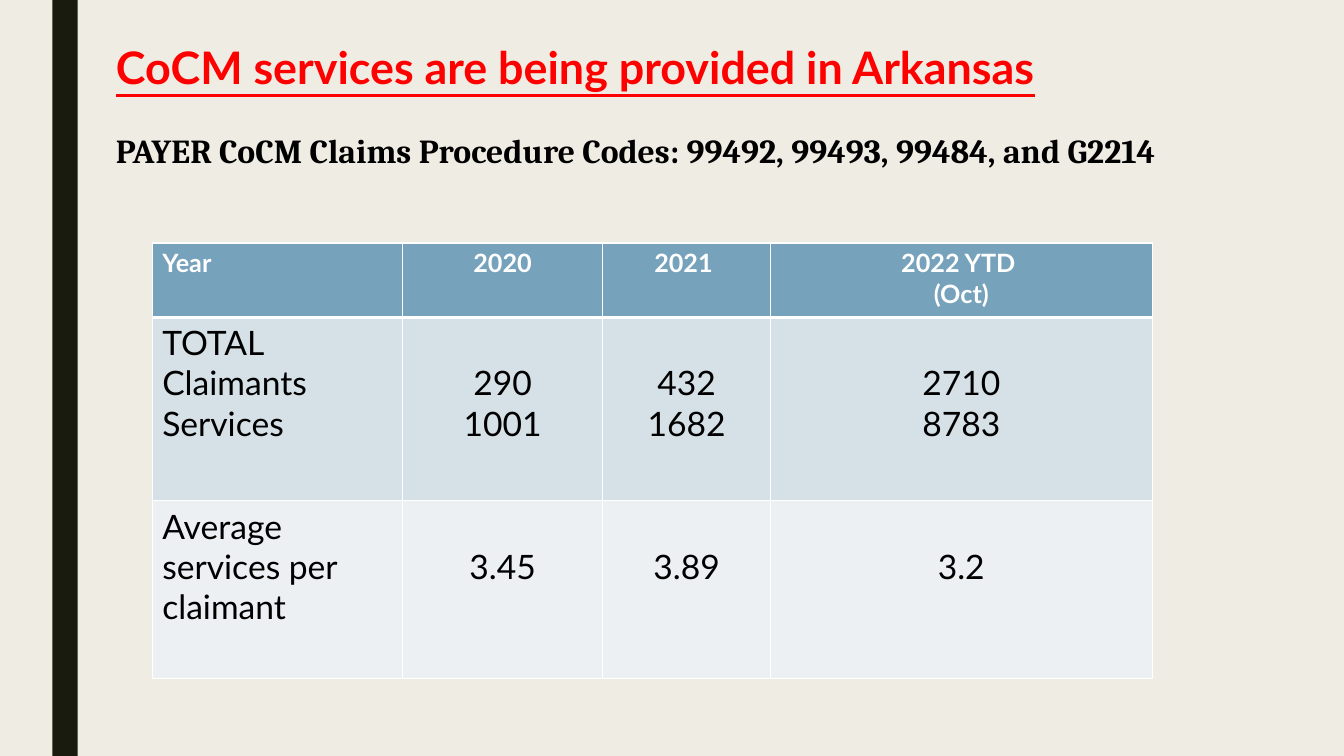
from lxml.etree import SubElement
from pptx import Presentation
from pptx.dml.color import RGBColor
from pptx.enum.shapes import MSO_SHAPE
from pptx.enum.text import MSO_ANCHOR, MSO_AUTO_SIZE, PP_ALIGN
from pptx.oxml.ns import qn
from pptx.util import Inches, Pt

COLUMN_WIDTHS = [2.48, 1.99, 1.66, 3.79]
ROW_HEIGHTS = [0.74, 1.82, 1.76]
ROW_FILLS = ["77A2BB", "D6E0E7", "ECF0F3"]
CLAIMS = [
    ["Year", "2020", "2021 ", "2022 YTD \n(Oct)"],
    ["TOTAL\nClaimants\nServices", "290\n1001", "432\n1682", "2710\n8783"],
    ["Average services per claimant", "3.45", "3.89", "3.2"],
]
LABEL_LINE = 0.4


def rgb(color):
    return RGBColor.from_string(color)


def set_font(paragraph, name, size, color, bold=False, underline=None):
    font = paragraph.font
    font.name, font.size = name, Pt(size)
    font.bold, font.underline = bold, underline
    font.color.rgb = rgb(color)


def set_borders(cell, color, bottom_width):
    properties = cell._tc.get_or_add_tcPr()
    for side, width in (("L", 1), ("R", 1), ("T", 1), ("B", bottom_width)):
        line = SubElement(properties, qn(f"a:ln{side}"), w=str(Pt(width)))
        fill = SubElement(line, qn("a:solidFill"))
        SubElement(fill, qn("a:srgbClr"), val=color)


def add_side_bar(slide, left, top, width, height):
    bar = slide.shapes.add_shape(
        MSO_SHAPE.RECTANGLE, Inches(left), Inches(top), Inches(width), Inches(height))
    bar.shadow.inherit = False
    bar.fill.solid()
    bar.fill.fore_color.rgb = rgb("191B0E")
    bar.line.fill.background()


def place_title(slide, left, top, width, height):
    title = slide.shapes.title
    title.left, title.top = Inches(left), Inches(top)
    title.width, title.height = Inches(width), Inches(height)
    frame = title.text_frame
    frame.text = "CoCM services are being provided in Arkansas"
    frame.word_wrap = True
    frame.auto_size = MSO_AUTO_SIZE.NONE
    frame.vertical_anchor = MSO_ANCHOR.TOP
    paragraph = frame.paragraphs[0]
    paragraph.alignment = PP_ALIGN.LEFT
    paragraph.line_spacing = 1.0
    paragraph.space_before = Pt(0)
    set_font(paragraph, "Lato", 32, "FF0000", bold=True, underline=True)


def add_subtitle(slide, left, top, width, height):
    box = slide.shapes.add_textbox(Inches(left), Inches(top), Inches(width), Inches(height))
    frame = box.text_frame
    frame.word_wrap = True
    frame.text = "PAYER CoCM Claims Procedure Codes: 99492, 99493, 99484, and G2214"
    set_font(frame.paragraphs[0], "Cambria", 24, "000000", bold=True)


def add_claims_table(slide, left, top, width, height):
    table = slide.shapes.add_table(
        len(CLAIMS), len(COLUMN_WIDTHS),
        Inches(left), Inches(top), Inches(width), Inches(height)).table
    for column, share in zip(table.columns, COLUMN_WIDTHS):
        column.width = Inches(width * share / sum(COLUMN_WIDTHS))
    for row, share in zip(table.rows, ROW_HEIGHTS):
        row.height = Inches(height * share / sum(ROW_HEIGHTS))
    for row_index, texts in enumerate(CLAIMS):
        header = row_index == 0
        for column_index, text in enumerate(texts):
            cell = table.cell(row_index, column_index)
            set_borders(cell, "FFFFFF", 3 if header else 1)
            cell.fill.solid()
            cell.fill.fore_color.rgb = rgb(ROW_FILLS[row_index])
            is_value = column_index > 0
            if is_value and not header:
                cell.margin_top = Inches(0.05 + LABEL_LINE)
            cell.text_frame.text = text
            for paragraph in cell.text_frame.paragraphs:
                paragraph.alignment = PP_ALIGN.CENTER if is_value else PP_ALIGN.LEFT
                set_font(paragraph, "Lato", 18 if header else 24,
                         "FFFFFF" if header else "000000", bold=header)


def main():
    presentation = Presentation()
    presentation.slide_width = Inches(13.33)
    presentation.slide_height = Inches(7.5)
    slide = presentation.slides.add_slide(presentation.slide_layouts[5])
    slide.background.fill.solid()
    slide.background.fill.fore_color.rgb = rgb("EFEDE3")
    add_side_bar(slide, 0.52, 0, 0.25, 7.5)
    add_claims_table(slide, 1.51, 2.41, 9.92, 4.32)
    add_subtitle(slide, 1.05, 1.24, 11.32, 0.5)
    place_title(slide, 1.05, 0.34, 10.87, 0.64)
    presentation.save("out.pptx")


if __name__ == "__main__":
    main()
